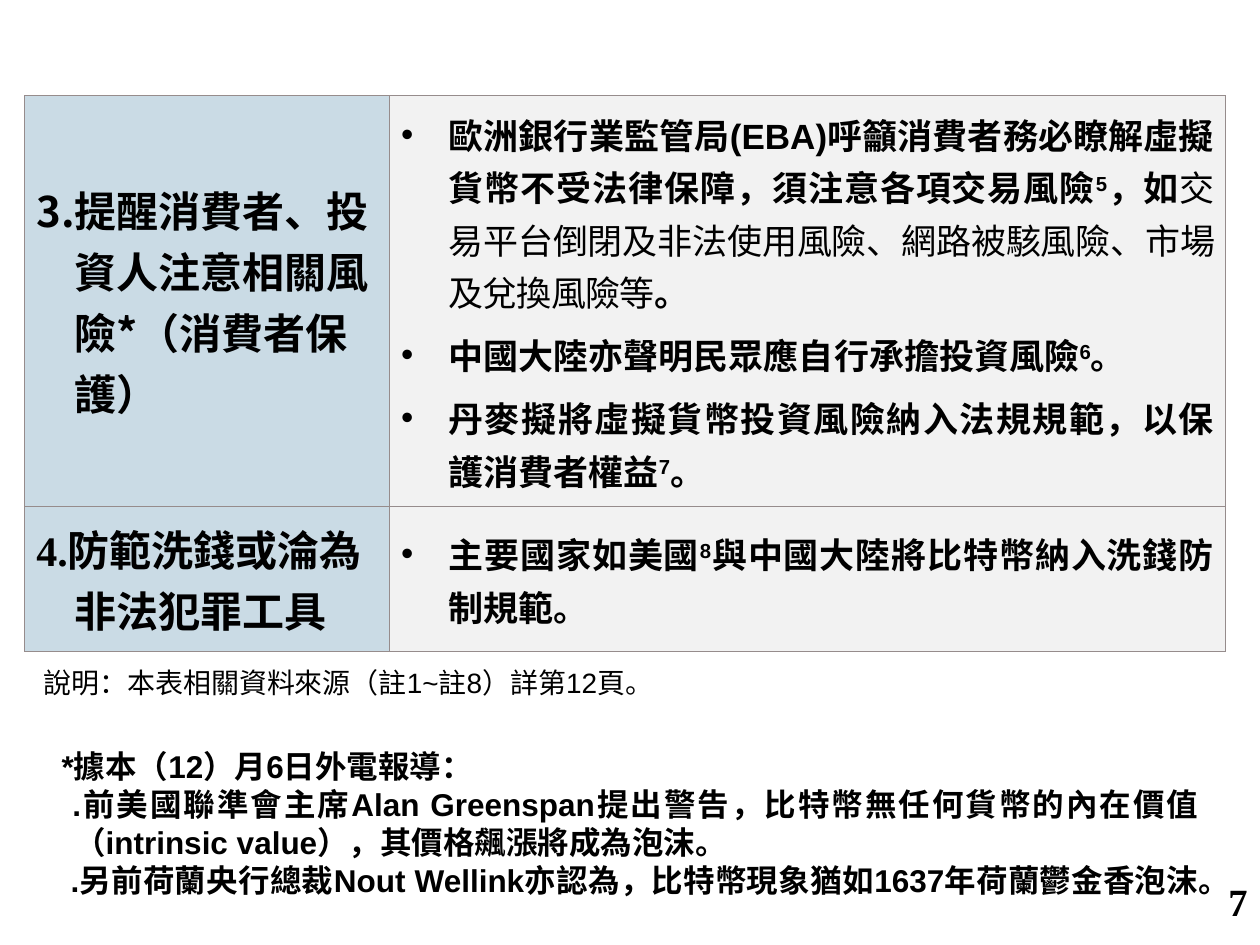
from lxml.etree import SubElement
from pptx import Presentation
from pptx.dml.color import RGBColor
from pptx.enum.text import MSO_ANCHOR, PP_ALIGN
from pptx.oxml.ns import qn
from pptx.util import Pt

ARIAL, TIMES = "Arial", "Times New Roman"
NOTO, NOTO_TC = "Noto Sans CJK SC", "Noto Sans CJK TC"
HEAD, BODY, BORDER, BLACK = "CADBE5", "F2F2F2", "968C8C", "000000"


def color(value):
    return RGBColor.from_string(value)


class Deck:
    def __init__(self, width, height):
        self.prs = Presentation()
        self.prs.slide_width, self.prs.slide_height = Pt(width), Pt(height)
        self.slide = self.prs.slides.add_slide(self.prs.slide_layouts[6])

    def run(self, p, text, size, font=ARIAL, bold=True, sup=False, spc=0):
        r = p.add_run()
        r.text = text
        r.font.size, r.font.bold = Pt(size), bold
        r.font.color.rgb = color(BLACK)
        r.font.name = font
        rpr = r.font._element
        SubElement(rpr, qn("a:ea"), typeface=NOTO_TC)
        if sup:
            rpr.set("baseline", "30000")
        if spc:
            rpr.set("spc", str(round(spc * 100)))

    def indent(self, p, left, hanging):
        ppr = p._p.get_or_add_pPr()
        ppr.set("marL", str(Pt(left)))
        ppr.set("indent", str(Pt(-hanging)))
        return ppr

    def text(self, x, y, w, h, paragraphs, size, font=ARIAL, bold=True,
             align=PP_ALIGN.LEFT, left=0, hanging=0, anchor=MSO_ANCHOR.TOP):
        tf = self.slide.shapes.add_textbox(Pt(x), Pt(y), Pt(w), Pt(h)).text_frame
        tf.word_wrap = True
        tf.vertical_anchor = anchor
        for i, text in enumerate(paragraphs):
            p = tf.paragraphs[0] if i == 0 else tf.add_paragraph()
            p.alignment = align
            p.line_spacing = Pt(size * 1.2)
            self.indent(p, left, hanging)
            self.run(p, text, size, font, bold)

    def cell(self, cell, fill):
        cell.vertical_anchor = MSO_ANCHOR.MIDDLE
        cell.margin_left = cell.margin_right = Pt(6.75)
        cell.margin_top = cell.margin_bottom = Pt(3.6)
        tcpr = cell._tc.get_or_add_tcPr()
        for side in ("lnL", "lnR", "lnT", "lnB"):
            ln = SubElement(tcpr, qn(f"a:{side}"), w=str(Pt(0.5)))
            SubElement(SubElement(ln, qn("a:solidFill")), qn("a:srgbClr"), val=BORDER)
        cell.fill.solid()
        cell.fill.fore_color.rgb = color(fill)

    def heading(self, cell, text, font):
        self.cell(cell, HEAD)
        p = cell.text_frame.paragraphs[0]
        self.indent(p, 21.6, 21.6)
        self.run(p, text, 24, font)

    def bullets(self, cell, items):
        self.cell(cell, BODY)
        tf = cell.text_frame
        for i, runs in enumerate(items):
            p = tf.paragraphs[0] if i == 0 else tf.add_paragraph()
            p.alignment = PP_ALIGN.JUSTIFY
            p.line_spacing, p.space_before = Pt(30), Pt(6)
            ppr = self.indent(p, 27, 27)
            SubElement(ppr, qn("a:buFont"), typeface=ARIAL)
            SubElement(ppr, qn("a:buChar"), char="•")
            for text, style in runs:
                self.run(p, text, 20, **style)

    def table(self, x, y, widths, heights, rows):
        table = self.slide.shapes.add_table(
            len(rows), len(widths), Pt(x), Pt(y), Pt(sum(widths)), Pt(sum(heights))).table
        for column, width in zip(table.columns, widths):
            column.width = Pt(width)
        for i, (height, (title, font, items)) in enumerate(zip(heights, rows)):
            table.rows[i].height = Pt(height)
            self.heading(table.cell(i, 0), title, font)
            self.bullets(table.cell(i, 1), items)


PLAIN, SUP = {}, {"sup": True}
LIGHT = {"font": NOTO, "bold": False, "spc": -0.5}

ROWS = [
    ("3.提醒消費者、投資人注意相關風險*（消費者保護）", NOTO, [
        [("歐洲銀行業監管局(EBA)呼籲消費者務必瞭解虛擬貨幣不受法律保障，須注意各項交易風險", PLAIN),
         ("5", SUP), ("，如", PLAIN),
         ("交易平台倒閉及非法使用風險、網路被駭風險、市場及兌換風險等", LIGHT),
         ("。", PLAIN)],
        [("中國大陸亦聲明民眾應自行承擔投資風險", PLAIN), ("6", SUP), ("。", PLAIN)],
        [("丹麥擬將虛擬貨幣投資風險納入法規規範，以保護消費者權益", PLAIN),
         ("7", SUP), ("。", PLAIN)],
    ]),
    ("4.防範洗錢或淪為非法犯罪工具", TIMES, [
        [("主要國家如美國", PLAIN), ("8", SUP),
         ("與中國大陸將比特幣納入洗錢防制規範。", PLAIN)],
    ]),
]

NEWS = [
    "*據本（12）月6日外電報導：",
    " .前美國聯準會主席Alan Greenspan提出警告，比特幣無任何貨幣的內在價值（intrinsic value），其價格飆漲將成為泡沫。",
    " .另前荷蘭央行總裁Nout Wellink亦認為，比特幣現象猶如1637年荷蘭鬱金香泡沫。",
]


def main():
    s = Deck(720, 540)
    s.table(14, 54.7, [208.5, 478], [234.7, 82.8], ROWS)
    s.text(570, 497, 150, 36, ["7"], 22, TIMES, align=PP_ALIGN.RIGHT,
           anchor=MSO_ANCHOR.MIDDLE)
    s.text(0, 423.5, 692, 94.5, NEWS, 18, align=PP_ALIGN.JUSTIFY, left=35.3, hanging=7.2)
    s.text(18, 376.5, 672, 26.6, ["說明：本表相關資料來源（註1~註8）詳第12頁。"], 16, bold=False)
    s.prs.save("out.pptx")


if __name__ == "__main__":
    main()
